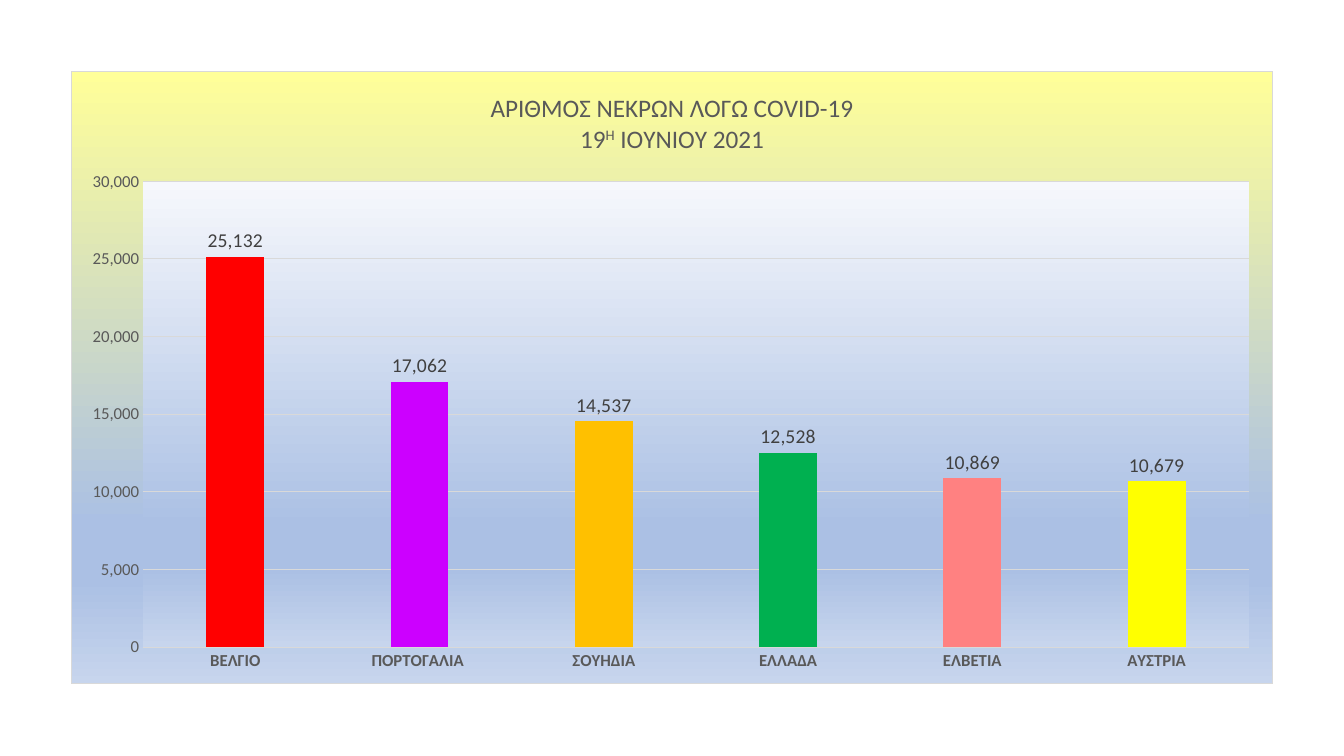
import pptx
import pptx.chart.data
import pptx.dml.color
import pptx.enum.chart
import pptx.oxml
import pptx.oxml.ns
import pptx.util
from pptx.util import Inches

COLORS = {
    "line": "D9D9D9", "text": "595959", "label": "404040",
    "frame_top": "FFFF99", "plot_top": "F6F8FC", "band": "ABC0E4", "base": "C7D5ED",
}
DEATHS = [
    ("ΒΕΛΓΙΟ", 25132, "FF0000"),
    ("ΠΟΡΤΟΓΑΛΙΑ ", 17062, "CC00FF"),
    ("ΣΟΥΗΔΙΑ", 14537, "FFC000"),
    ("ΕΛΛΑΔΑ", 12528, "00B050"),
    ("ΕΛΒΕΤΙΑ", 10869, "FF8181"),
    ("ΑΥΣΤΡΙΑ", 10679, "FFFF00"),
]
TITLE_LINES = [
    [("ΑΡΙΘΜΟΣ ΝΕΚΡΩΝ ΛΟΓΩ COVID-19", False)],
    [("19", False), ("Η", True), (" ΙΟΥΝΙΟΥ 2021", False)],
]
PLOT_LAYOUT = {"x": 0.06, "y": 0.18, "w": 0.92, "h": 0.76}
NAMESPACES = pptx.oxml.ns.nsdecls("c", "a")


def rgb(name):
    return pptx.dml.color.RGBColor.from_string(COLORS.get(name, name))


def style_font(font, size, color="text", bold=False):
    font.name = "Calibri"
    font.size = pptx.util.Pt(size)
    font.bold = bold
    font.color.rgb = rgb(color)


def style_line(line):
    line.color.rgb = rgb("line")
    line.width = pptx.util.Pt(0.75)


def gradient_area(top, border):
    """Return chart area properties with a vertical gradient."""
    stops = [(0, top), (74, "band"), (83, "band"), (100, "base")]
    stop_xml = "".join(
        f'<a:gs pos="{place * 1000}"><a:srgbClr val="{COLORS[name]}"/></a:gs>'
        for place, name in stops)
    line_fill = (f'<a:solidFill><a:srgbClr val="{COLORS["line"]}"/></a:solidFill>'
                 if border else "<a:noFill/>")
    return pptx.oxml.parse_xml(
        f'<c:spPr {NAMESPACES}><a:gradFill><a:gsLst>{stop_xml}</a:gsLst>'
        f'<a:lin ang="5400000" scaled="0"/></a:gradFill>'
        f'<a:ln w="9525">{line_fill}</a:ln></c:spPr>')


def add_title(chart):
    frame = chart.chart_title.text_frame
    chart.chart_title.include_in_layout = False
    for index, spans in enumerate(TITLE_LINES):
        para = frame.paragraphs[0] if index == 0 else frame.add_paragraph()
        style_font(para.font, 18)
        for text, raised in spans:
            span = para.add_run()
            span.text = text
            style_font(span.font, 18)
            if raised:
                span.font._element.set("baseline", "30000")


def style_axes(chart):
    for axis in (chart.category_axis, chart.value_axis):
        axis.major_tick_mark = pptx.enum.chart.XL_TICK_MARK.NONE
        axis.minor_tick_mark = pptx.enum.chart.XL_TICK_MARK.NONE
        style_font(axis.tick_labels.font, 12, bold=axis is chart.category_axis)
    countries, counts = chart.category_axis, chart.value_axis
    countries.tick_labels.font.bold = True
    style_line(countries.format.line)
    counts.format.line.fill.background()
    counts.minimum_scale, counts.maximum_scale, counts.major_unit = 0, 30000, 5000
    counts.has_major_gridlines = True
    style_line(counts.major_gridlines.format.line)
    counts.tick_labels.number_format = "#,##0"
    counts.tick_labels.number_format_is_linked = False


def style_bars(plot):
    plot.gap_width, plot.overlap = 219, -27
    plot.vary_by_categories = False
    series = plot.series[0]
    series.format.fill.solid()
    series.format.fill.fore_color.rgb = rgb("4472C4")
    for index, (_, _, color) in enumerate(DEATHS):
        fill = series.points[index].format.fill
        fill.solid()
        fill.fore_color.rgb = rgb(color)
    labels = series.data_labels
    labels.show_value = True
    labels.position = pptx.enum.chart.XL_LABEL_POSITION.OUTSIDE_END
    labels.number_format = "#,##0"
    labels.number_format_is_linked = False
    style_font(labels.font, 14, "label")


def style_areas(chart):
    """Fill the frame and the plot, and fix the inner plot position."""
    space = chart._chartSpace
    space.chart.addnext(gradient_area("frame_top", True))
    area = space.chart.plotArea
    for layout in area.findall(pptx.oxml.ns.qn("c:layout")):
        area.remove(layout)
    modes = "".join(f'<c:{side}Mode val="edge"/>' for side in "xy")
    sizes = "".join(f'<c:{side} val="{share}"/>' for side, share in PLOT_LAYOUT.items())
    area.insert(0, pptx.oxml.parse_xml(
        f'<c:layout {NAMESPACES}><c:manualLayout><c:layoutTarget val="inner"/>'
        f'{modes}{sizes}</c:manualLayout></c:layout>'))
    area.append(gradient_area("plot_top", False))


def add_deaths_chart(page, left, top, width, height):
    data = pptx.chart.data.CategoryChartData(number_format="#,##0")
    data.categories = [country for country, _, _ in DEATHS]
    data.add_series("Series 1", [count for _, count, _ in DEATHS])
    chart = page.shapes.add_chart(
        pptx.enum.chart.XL_CHART_TYPE.COLUMN_CLUSTERED,
        left, top, width, height, data).chart
    chart.has_legend = False
    style_font(chart.font, 10, "000000")
    add_title(chart)
    style_axes(chart)
    style_bars(chart.plots[0])
    style_areas(chart)


def main():
    deck = pptx.Presentation()
    deck.slide_width, deck.slide_height = Inches(13.33), Inches(7.5)
    page = deck.slides.add_slide(deck.slide_layouts[6])
    add_deaths_chart(page, Inches(0.7), Inches(0.7), Inches(11.93), Inches(6.09))
    deck.save("out.pptx")


if __name__ == "__main__":
    main()
